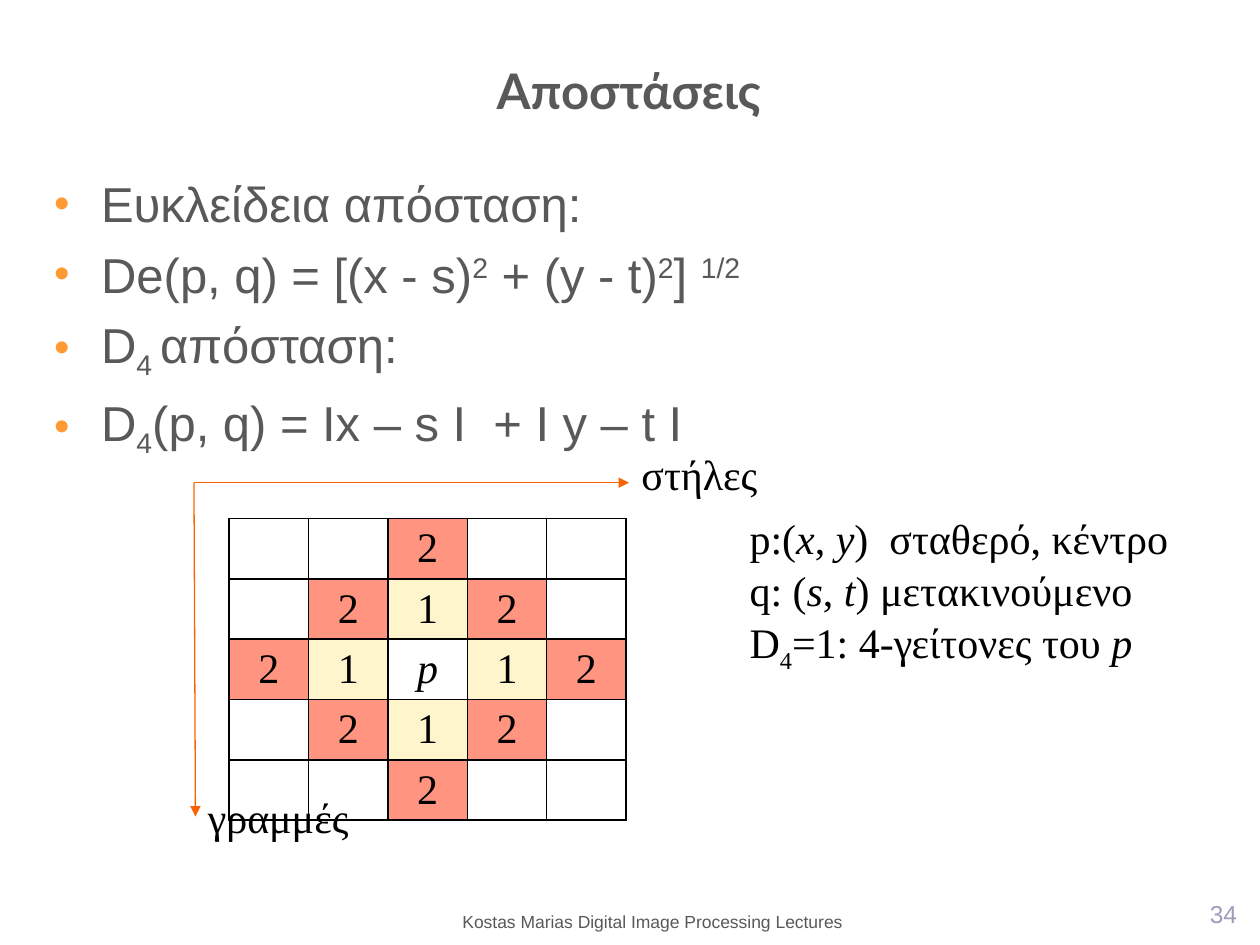
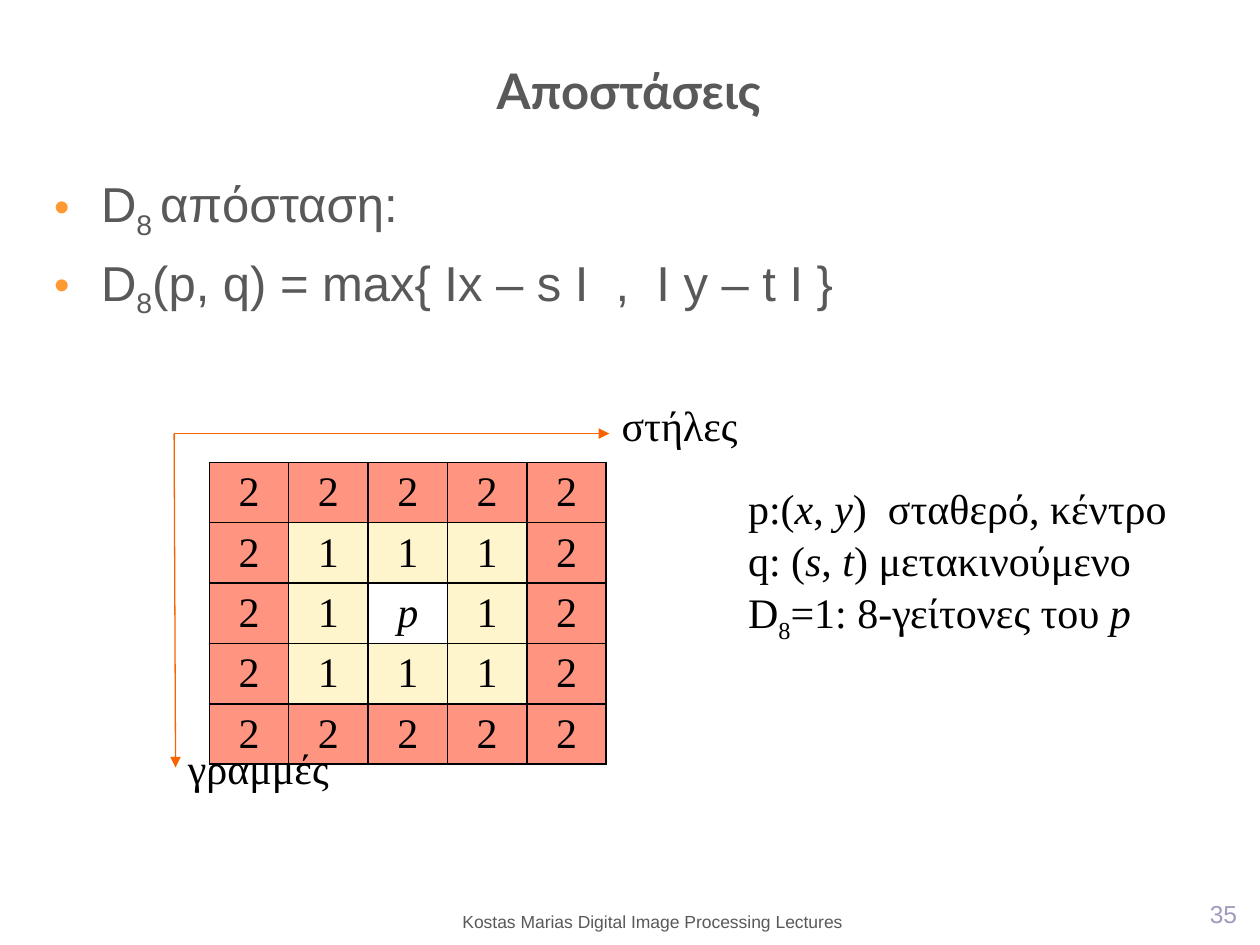
from dataclasses import dataclass
from typing import Callable

from lxml.etree import SubElement
from pptx import Presentation
from pptx.dml.color import RGBColor
from pptx.enum.shapes import MSO_CONNECTOR
from pptx.enum.text import MSO_ANCHOR, MSO_AUTO_SIZE, PP_ALIGN
from pptx.oxml.ns import qn
from pptx.util import Cm, Pt

COLORS = {
    "text": "595959", "ink": "000000", "page": "A299BD", "bullet": "FF9933",
    "axis": "F96400", "near": "FFF5CC", "far": "FF9480",
}
SANS, SERIF, HEAD = "Arial", "Times New Roman", "Lato"
SERIF_INK = dict(font=SERIF, size=24, color="ink")
MARKS = {"^": 30000, "_": -25000}  # baseline shift of a marked part
SIDE = 5
COL, ROW = 1.6, 1.19


@dataclass
class Lesson:
    page: int
    order: int
    bullets: list[str]
    metric: Callable[[int, int], int]
    grid: tuple[float, float]
    corner: tuple[float, float]
    note: tuple[float, float]


LESSONS = [
    Lesson(34, 4,
           ["Ευκλείδεια απόσταση:",
            "De(p, q) = [(x - s)|^2| + (y - t)|^2|] |^1/2",
            "D|_4 |απόσταση:",
            "D|_4|(p, q) = Ix – s I  + I y – t I"],
           lambda dx, dy: dx + dy, (4.62, 10.45), (3.91, 9.73), (14.86, 10.21)),
    Lesson(35, 8,
           ["D|_8 |απόσταση:",
            "D|_8|(p, q) = max{ Ix – s I  ,  I y – t I }"],
           max, (4.22, 9.32), (3.51, 8.74), (14.83, 9.6)),
]


def rgb(name: str) -> RGBColor:
    return RGBColor.from_string(COLORS[name])


def write(frame, lines: list[str], font=SANS, size=28, color="text",
          bold=False, align=PP_ALIGN.LEFT, gap=0, bullet=False) -> None:
    """Fill a frame; parts split by | may start with ^ (super), _ (sub) or * (italic)."""
    for i, line in enumerate(lines):
        para = frame.paragraphs[0] if i == 0 else frame.add_paragraph()
        if bullet:
            add_bullet(para)
        para.alignment = align
        para.space_before = Pt(gap if i else 0)
        for part in line.split("|"):
            mark = part[0] if part[0] in "^_*" else ""
            run = para.add_run()
            run.text = part[len(mark):]
            style = run.font
            style.name, style.size, style.bold = font, Pt(size), bold
            style.italic = mark == "*"
            style.color.rgb = rgb(color)
            if mark in MARKS:
                style._element.set("baseline", str(MARKS[mark]))


def add_bullet(para) -> None:
    props = para._p.get_or_add_pPr()
    props.set("marL", str(Cm(0.95)))
    props.set("indent", str(-Cm(0.95)))
    tint = SubElement(props, qn("a:buClr"))
    SubElement(tint, qn("a:srgbClr"), val=COLORS["bullet"])
    SubElement(props, qn("a:buSzPct"), val="90000")
    SubElement(props, qn("a:buFont"), typeface=SANS)
    SubElement(props, qn("a:buChar"), char="•")


def add_text(shapes, box: tuple[float, ...], lines: list[str],
             anchor=MSO_ANCHOR.TOP, wrap=True, **style) -> None:
    frame = shapes.add_textbox(*map(Cm, box)).text_frame
    frame.word_wrap = wrap
    frame.vertical_anchor = anchor
    write(frame, lines, **style)


def add_title(slide, text: str) -> None:
    title = slide.shapes.title
    title.left, title.top, title.width, title.height = map(Cm, (0.43, 0.64, 24.49, 1.9))
    frame = title.text_frame
    frame.auto_size = MSO_AUTO_SIZE.NONE
    frame.vertical_anchor = MSO_ANCHOR.BOTTOM
    write(frame, [text], font=HEAD, bold=True, align=PP_ALIGN.CENTER)


def add_footer(slide, page: int) -> None:
    add_text(slide.shapes, (21.46, 18.06, 3.73, 0.79), [str(page)], size=14,
             color="page", align=PP_ALIGN.RIGHT, anchor=MSO_ANCHOR.BOTTOM)
    add_text(slide.shapes, (1.4, 18.24, 23.5, 0.69),
             ["Kostas Marias Digital Image Processing Lectures"],
             size=10, align=PP_ALIGN.CENTER)


def add_border(cell) -> None:
    props = cell._tc.get_or_add_tcPr()
    for edge in "LRTB":
        line = SubElement(props, qn(f"a:ln{edge}"), w=str(Pt(1)))
        fill = SubElement(line, qn("a:solidFill"))
        SubElement(fill, qn("a:srgbClr"), val=COLORS["ink"])


def add_grid(slide, lesson: Lesson) -> None:
    """Draw each cell's distance from the centre, up to two."""
    left, top = lesson.grid
    table = slide.shapes.add_table(SIDE, SIDE, Cm(left), Cm(top),
                                   Cm(SIDE * COL), Cm(SIDE * ROW)).table
    table.first_row = table.horz_banding = False
    for i in range(SIDE):
        table.columns[i].width, table.rows[i].height = Cm(COL), Cm(ROW)
    mid = SIDE // 2
    looks = {0: ("*p", None), 1: ("1", "near"), 2: ("2", "far")}
    for row in range(SIDE):
        for col in range(SIDE):
            cell = table.cell(row, col)
            cell.margin_top = cell.margin_bottom = Cm(0.1)
            cell.vertical_anchor = MSO_ANCHOR.MIDDLE
            add_border(cell)
            span = lesson.metric(abs(col - mid), abs(row - mid))
            text, fill = looks.get(span, (None, None))
            if text:
                write(cell.text_frame, [text], align=PP_ALIGN.CENTER, **SERIF_INK)
            if fill:
                cell.fill.solid()
                cell.fill.fore_color.rgb = rgb(fill)
            else:
                cell.fill.background()


def add_axes(slide, corner: tuple[float, float]) -> None:
    shapes = slide.shapes.add_group_shape().shapes
    x, y = corner
    for dx, dy in ((0.03, 6.73), (8.77, 0)):
        arrow = shapes.add_connector(MSO_CONNECTOR.STRAIGHT,
                                     Cm(x), Cm(y), Cm(x + dx), Cm(y + dy))
        arrow.line.color.rgb = rgb("axis")
        arrow.line.width = Pt(0.75)
        SubElement(arrow.line._get_or_add_ln(), qn("a:tailEnd"), type="triangle")
        SubElement(arrow._element.spPr, qn("a:effectLst"))
    for dx, dy, name in ((8.77, -0.81, "στήλες"), (0.03, 6.1, "γραμμές")):
        add_text(shapes, (x + dx, y + dy, 6.17, 1.27), [name], **SERIF_INK)


def add_lesson(deck, lesson: Lesson) -> None:
    slide = deck.slides.add_slide(deck.slide_layouts.get_by_name("Title Only"))
    add_footer(slide, lesson.page)
    add_title(slide, "Αποστάσεις")
    add_text(slide.shapes, (0.84, 3.38, 23.7, 14.6), lesson.bullets, gap=6.5, bullet=True)
    add_grid(slide, lesson)
    add_axes(slide, lesson.corner)
    n = lesson.order
    add_text(slide.shapes, (*lesson.note, 9.04, 4.37),
             ["p:(|*x|, |*y|)  σταθερό, κέντρο",
              "q: (|*s|, |*t|) μετακινούμενο",
              f"D|_{n}|=1: {n}-γείτονες του |*p"],
             wrap=False, gap=1, **SERIF_INK)


def main() -> None:
    deck = Presentation()
    deck.slide_width, deck.slide_height = Cm(25.4), Cm(19.05)
    for lesson in LESSONS:
        add_lesson(deck, lesson)
    deck.save("out.pptx")


if __name__ == "__main__":
    main()
